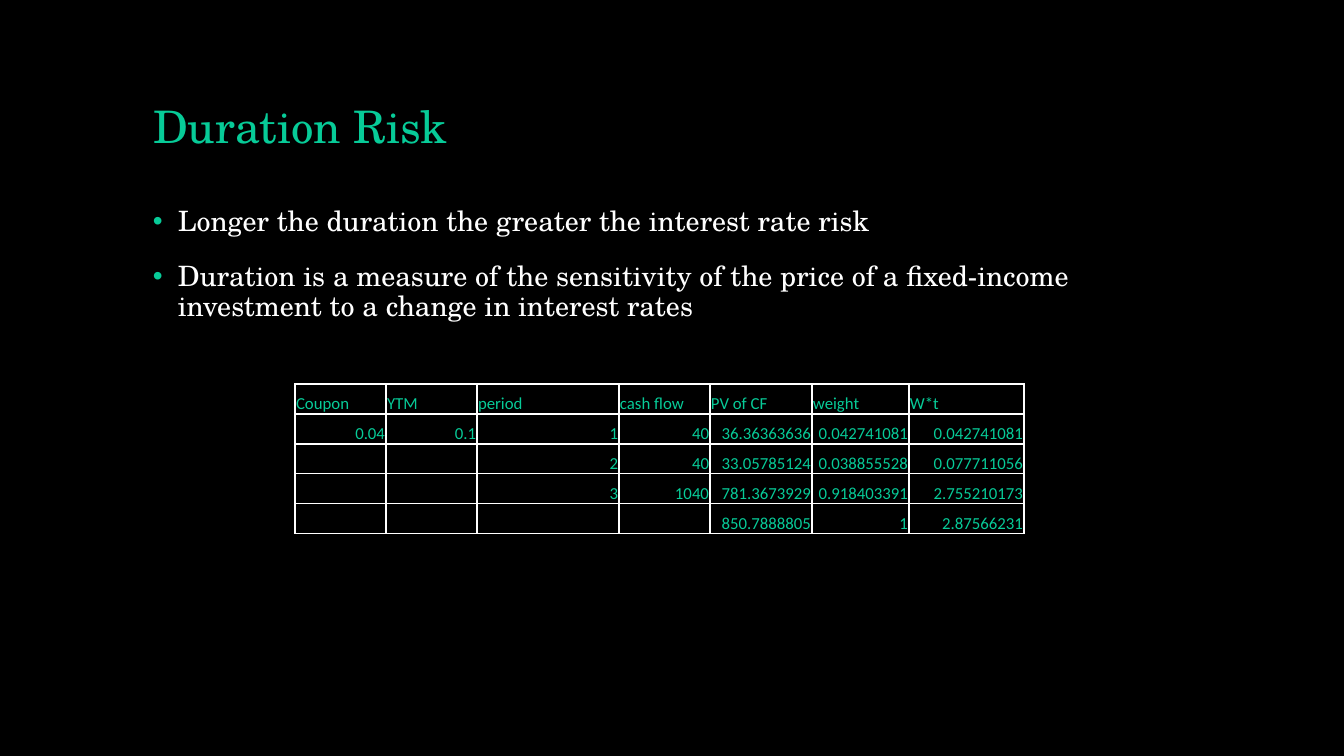
from dataclasses import dataclass

from lxml import etree
from pptx import Presentation
from pptx.dml.color import RGBColor
from pptx.enum.text import MSO_ANCHOR, PP_ALIGN
from pptx.oxml.ns import qn
from pptx.util import Emu, Pt

BOTTOM, TOP = MSO_ANCHOR.BOTTOM, MSO_ANCHOR.TOP
LEFT, RIGHT = PP_ALIGN.LEFT, PP_ALIGN.RIGHT
EMU_PER_PX = 914400 / 100.8
COLORS = {"background": "000000", "accent": "07CB98", "text": "FFFFFF"}
SERIF, SANS = "TeX Gyre Schola", "Calibri"
BULLET_INDENT = 25
ROW_HEIGHT = 30


@dataclass(frozen=True)
class Column:
    heading: str
    width: int
    values: tuple[str, str, str, str]


POINTS = (
    "Longer the duration the greater the interest rate risk",
    "Duration is a measure of the sensitivity of the price of a fixed-income "
    "investment to a change in interest rates",
)
COLUMNS = (
    Column("Coupon", 91, ("0.04", "", "", "")),
    Column("YTM", 91, ("0.1", "", "", "")),
    Column("period", 142, ("1", "2", "3", "")),
    Column("cash flow", 91, ("40", "40", "1040", "")),
    Column("PV of CF", 102, ("36.36363636", "33.05785124", "781.3673929", "850.7888805")),
    Column("weight", 97, ("0.042741081", "0.038855528", "0.918403391", "1")),
    Column("W*t", 115, ("0.042741081", "0.077711056", "2.755210173", "2.87566231")),
)


def px(length: int) -> Emu:
    return Emu(round(length * EMU_PER_PX))


def add_run(paragraph, text: str, font: str, size: int, color: str) -> None:
    run = paragraph.add_run()
    run.text = text
    run.font.name = font
    run.font.size = Pt(size)
    run.font.color.rgb = RGBColor.from_string(COLORS[color])


def add_title(slide, text: str) -> None:
    title = slide.shapes.title
    title.left, title.top, title.width, title.height = px(143), px(40), px(1058), px(118)
    title.text_frame.vertical_anchor = BOTTOM
    heading = title.text_frame.paragraphs[0]
    heading.alignment = LEFT
    heading.line_spacing = 0.9
    add_run(heading, text, SERIF, 32, "accent")


def add_bullet(paragraph) -> None:
    properties = paragraph._p.get_or_add_pPr()
    properties.set("marL", str(px(BULLET_INDENT)))
    properties.set("indent", str(-px(BULLET_INDENT)))
    bullet_color = etree.SubElement(properties, qn("a:buClr"))
    etree.SubElement(bullet_color, qn("a:srgbClr"), val=COLORS["accent"])
    etree.SubElement(properties, qn("a:buFont"), typeface="Arial")
    etree.SubElement(properties, qn("a:buChar"), char="•")


def add_points(slide, points: tuple[str, ...]) -> None:
    body = slide.shapes.add_textbox(px(143), px(202), px(1058), px(480)).text_frame
    body.word_wrap = True
    body.vertical_anchor = TOP
    for index, text in enumerate(points):
        point = body.add_paragraph() if index else body.paragraphs[0]
        point.line_spacing = 0.9
        point.space_before = Pt(18)
        add_bullet(point)
        add_run(point, text, SERIF, 20, "text")


def add_borders(cell) -> None:
    properties = cell._tc.get_or_add_tcPr()
    for side in ("lnL", "lnR", "lnT", "lnB"):
        border = etree.SubElement(properties, qn(f"a:{side}"), w=str(Pt(1)))
        fill = etree.SubElement(border, qn("a:solidFill"))
        etree.SubElement(fill, qn("a:srgbClr"), val=COLORS["text"])


def fill_cell(cell, text: str, alignment: PP_ALIGN) -> None:
    add_borders(cell)
    cell.fill.background()
    cell.vertical_anchor = BOTTOM
    cell.margin_left = cell.margin_right = cell.margin_top = px(1)
    cell.margin_bottom = 0
    paragraph = cell.text_frame.paragraphs[0]
    paragraph.alignment = alignment
    if text:
        add_run(paragraph, text, SANS, 12, "accent")
    else:
        etree.SubElement(paragraph._p, qn("a:endParaRPr"), sz="1200")


def add_duration_table(slide, columns: tuple[Column, ...]) -> None:
    row_count = 1 + len(columns[0].values)
    width = sum(column.width for column in columns)
    table = slide.shapes.add_table(
        row_count, len(columns), px(295), px(384), px(width), px(row_count * ROW_HEIGHT)
    ).table
    table.first_row = table.horz_banding = False
    for row in table.rows:
        row.height = px(ROW_HEIGHT)
    for column_index, column in enumerate(columns):
        table.columns[column_index].width = px(column.width)
        for row_index, text in enumerate((column.heading, *column.values)):
            fill_cell(table.cell(row_index, column_index), text, RIGHT if row_index else LEFT)


def main() -> None:
    presentation = Presentation()
    presentation.slide_width, presentation.slide_height = px(1344), px(756)
    slide = presentation.slides.add_slide(presentation.slide_layouts.get_by_name("Title Only"))
    slide.background.fill.solid()
    slide.background.fill.fore_color.rgb = RGBColor.from_string(COLORS["background"])
    add_title(slide, "Duration Risk")
    add_points(slide, POINTS)
    add_duration_table(slide, COLUMNS)
    presentation.save("out.pptx")


if __name__ == "__main__":
    main()
